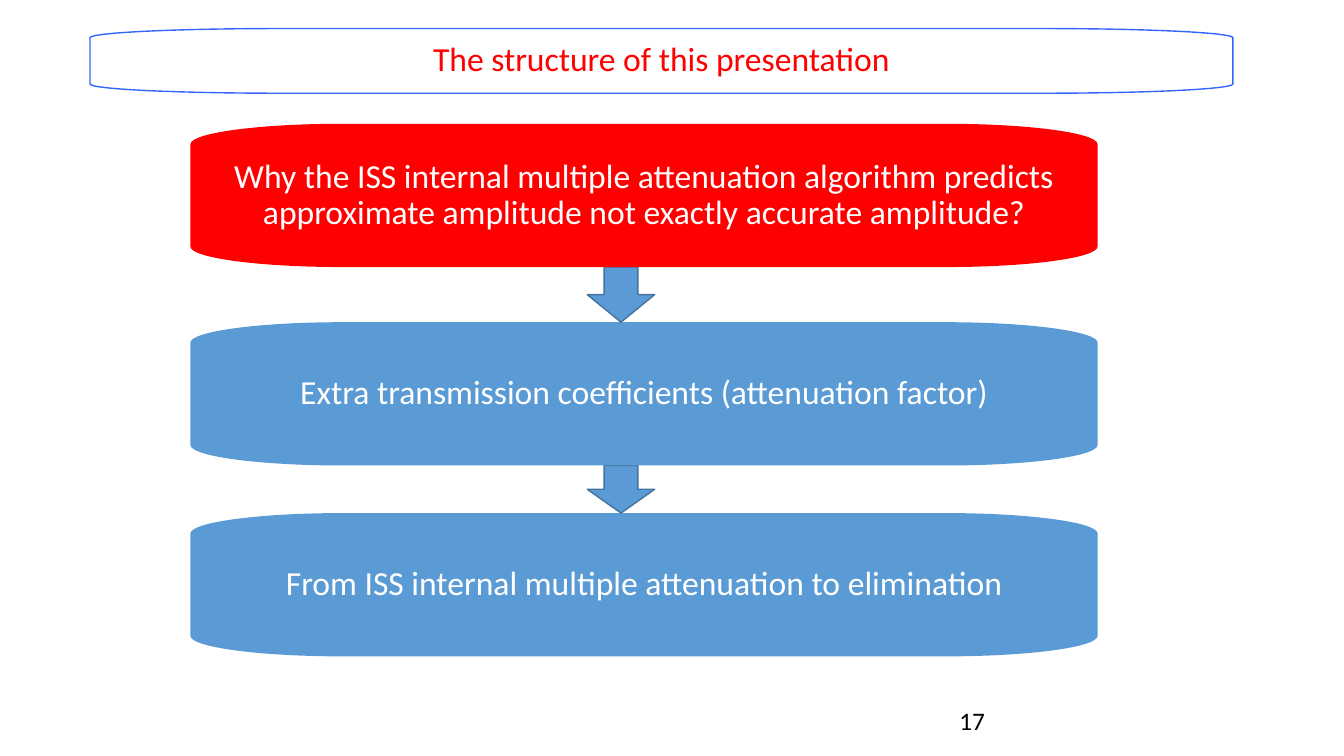
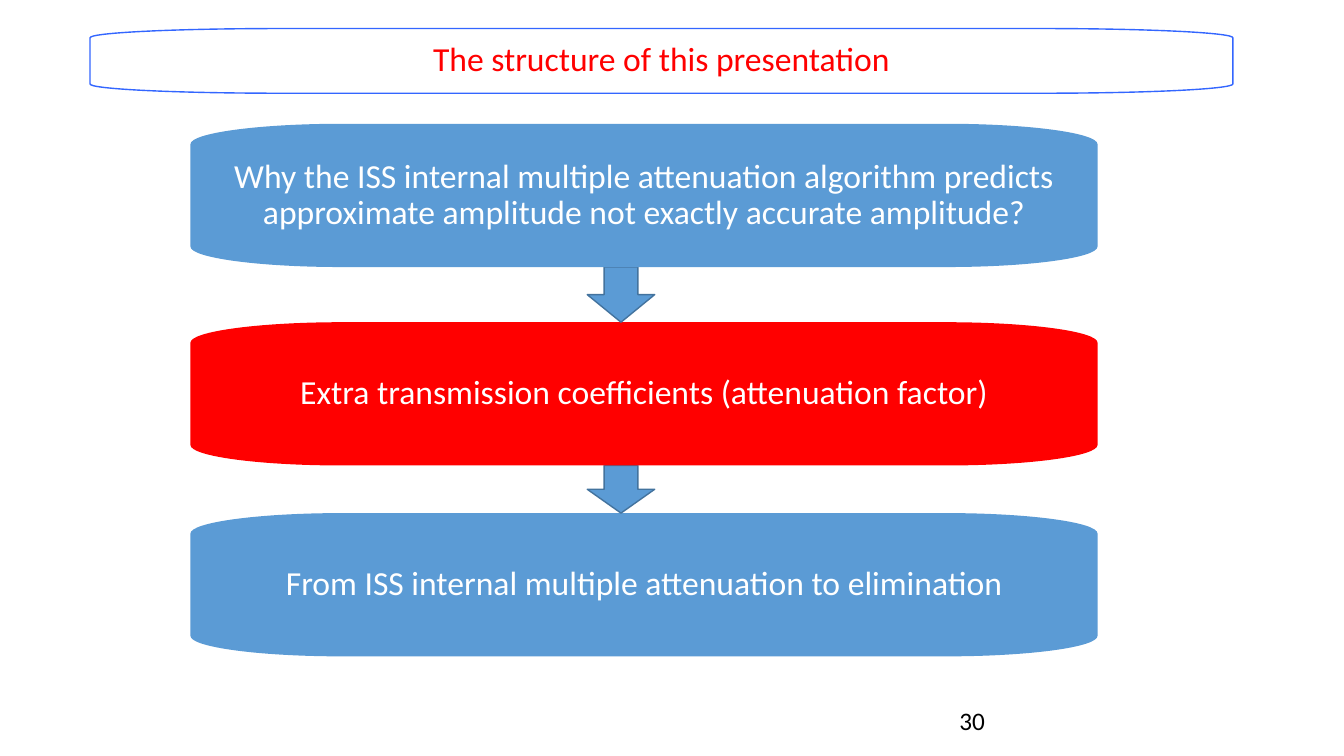
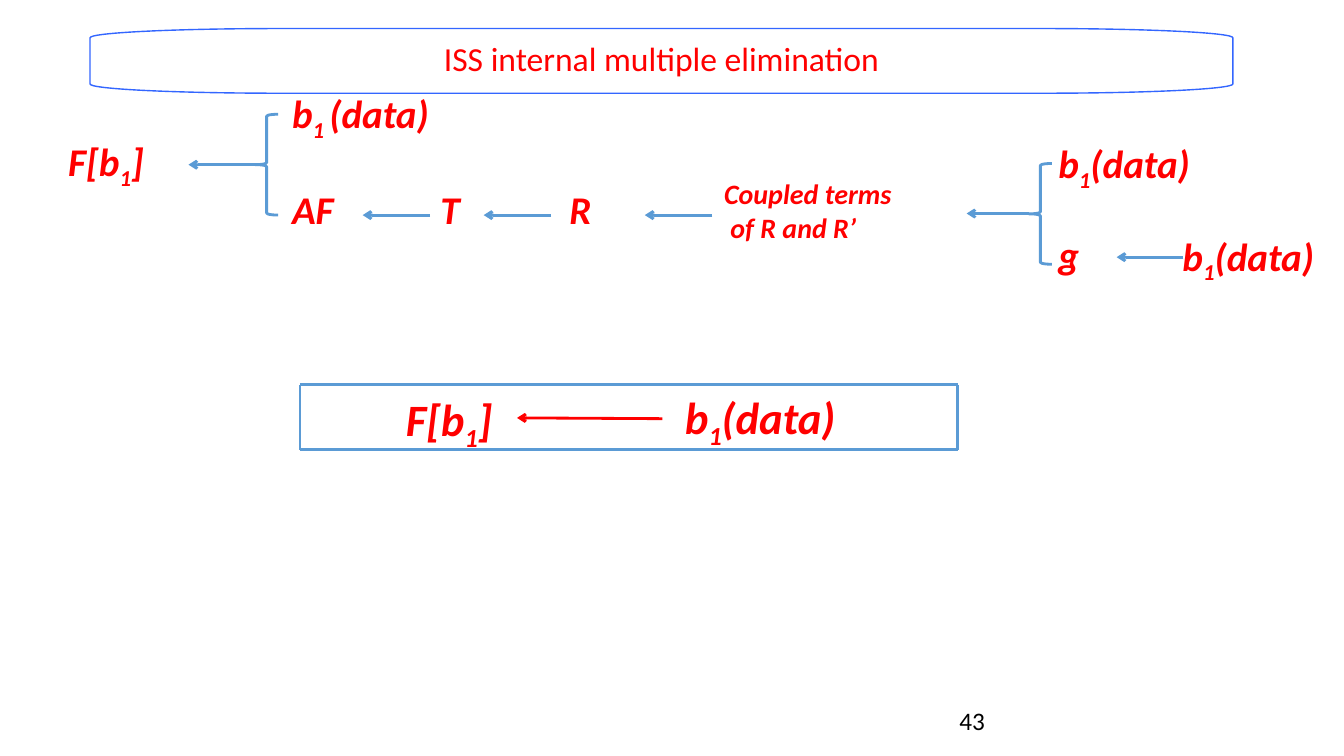
from lxml import etree
from pptx import Presentation
from pptx.dml.color import RGBColor
from pptx.enum import shapes, text
from pptx.oxml.ns import qn
from pptx.util import Cm, Pt

WHITE = RGBColor(0xFF, 0xFF, 0xFF)
BLACK = RGBColor(0x00, 0x00, 0x00)
RED = RGBColor(0xFF, 0x00, 0x00)
BLUE = RGBColor(0x5B, 0x9B, 0xD5)
DARK_BLUE = RGBColor(0x43, 0x73, 0x9E)
TITLE_BLUE = RGBColor(0x33, 0x66, 0xFF)

STEPS = [
    "Why the ISS internal multiple attenuation algorithm predicts "
    "approximate amplitude not exactly accurate amplitude?",
    "Extra transmission coefficients (attenuation factor)",
    "From ISS internal multiple attenuation to elimination",
]
STEP_TOPS = [3.12, 8.12, 12.93]
STEP_LEFT, STEP_WIDTH, STEP_HEIGHT = 4.8, 22.86, 3.61


class Deck:
    font = "Calibri"

    def __init__(self):
        self.prs = Presentation()
        self.prs.slide_width, self.prs.slide_height = Cm(33.87), Cm(19.05)
        self.shapes = None

    def new_slide(self):
        self.shapes = self.prs.slides.add_slide(self.prs.slide_layouts[6]).shapes

    def style_font(self, font, size, color, slanted=False):
        font.name, font.size, font.color.rgb = self.font, Pt(size), color
        font.bold = font.italic = slanted

    def paint(self, shape, fill, line, width=1):
        shape.shadow.inherit = False
        if fill is None:
            shape.fill.background()
        else:
            shape.fill.solid()
            shape.fill.fore_color.rgb = fill
        if line is None:
            shape.line.fill.background()
        else:
            shape.line.color.rgb = line
            shape.line.width = Pt(width)

    def barrel_outline(self, left, top, width, height):
        """An octagon whose four slanted sides are bent into elliptical corners."""
        w, h = Cm(width), Cm(height)
        rx, ry = w // 6, h // 7
        points = [(0, ry), (rx, 0), (w - rx, 0), (w, ry),
                  (w, h - ry), (w - rx, h), (rx, h), (0, h - ry)]
        builder = self.shapes.build_freeform(*points[0])
        builder.add_line_segments(points[1:], close=True)
        box = builder.convert_to_shape(Cm(left), Cm(top))
        slants = list(box._element.iter(qn("a:lnTo")))[::2]
        corners = [(0, 0), (w, 0), (w, h), (0, h)]
        for slant, corner, start, end in zip(slants, corners, points[::2], points[1::2]):
            slant_parent = slant.getparent()
            curve = etree.Element(qn("a:cubicBezTo"))
            pulls = [tuple(round(p + 0.55 * (c - p)) for p, c in zip(point, corner))
                     for point in (start, end)]
            for x, y in pulls + [end]:
                etree.SubElement(curve, qn("a:pt"), x=str(x), y=str(y))
            slant_parent.replace(slant, curve)
        return box

    def barrel(self, left, top, width, height, words, fill, color, line=None):
        box = self.barrel_outline(left, top, width, height)
        self.paint(box, fill, line)
        frame = box.text_frame
        frame.word_wrap = True
        frame.vertical_anchor = text.MSO_ANCHOR.MIDDLE
        frame.margin_left = frame.margin_right = Cm(0.38)
        frame.margin_top = frame.margin_bottom = Cm(0.38)
        frame.text = words
        paragraph = frame.paragraphs[0]
        paragraph.alignment = text.PP_ALIGN.CENTER
        paragraph.line_spacing = 0.9
        self.style_font(paragraph.runs[0].font, 24, color)

    def title(self, words):
        self.barrel(2.27, 0.72, 28.8, 1.63, words, WHITE, RED, TITLE_BLUE)

    def page_number(self, number):
        box = self.shapes.add_textbox(Cm(23.93), Cm(17.65), Cm(7.62), Cm(1.02))
        box.text_frame.word_wrap = True
        box.text_frame.text = str(number)
        self.style_font(box.text_frame.paragraphs[0].runs[0].font, 18, BLACK)

    def preset(self, kind, left, top, width, height, fill, line, weight):
        shape = self.shapes.add_shape(kind, Cm(left), Cm(top), Cm(width), Cm(height))
        self.paint(shape, fill, line, weight)

    def line(self, x1, y1, x2, y2, color=BLUE, arrow=False):
        line = self.shapes.add_connector(
            shapes.MSO_CONNECTOR.STRAIGHT, Cm(x1), Cm(y1), Cm(x2), Cm(y2))
        line.line.color.rgb = color
        line.line.width = Pt(2)
        if arrow:
            etree.SubElement(line.line._get_or_add_ln(), qn("a:tailEnd"), type="arrow")
        etree.SubElement(line._element.spPr, qn("a:effectLst"))

    def term(self, left, top, width, height, *lines, size=28):
        """Bold italic red text; a part between underscores is a subscript."""
        box = self.shapes.add_textbox(Cm(left), Cm(top), Cm(width), Cm(height))
        frame = box.text_frame
        frame.word_wrap = False
        frame.auto_size = text.MSO_AUTO_SIZE.SHAPE_TO_FIT_TEXT
        for index, line in enumerate(lines):
            paragraph = frame.add_paragraph() if index else frame.paragraphs[0]
            for part, words in enumerate(line.split("_")):
                run = paragraph.add_run()
                run.text = words
                self.style_font(run.font, size, RED, slanted=True)
                if part % 2:
                    run._r.get_or_add_rPr().set("baseline", "-25000")


def structure_slide(deck, current, number):
    """The outline, with the current step in red."""
    deck.new_slide()
    for index in reversed(range(len(STEPS))):
        top = STEP_TOPS[index]
        bottom = top + STEP_HEIGHT
        if index + 1 < len(STEPS):
            deck.preset(shapes.MSO_SHAPE.DOWN_ARROW, 14.8, bottom, 1.7,
                        STEP_TOPS[index + 1] - bottom, BLUE, DARK_BLUE, 1)
        deck.barrel(STEP_LEFT, top, STEP_WIDTH, STEP_HEIGHT, STEPS[index],
                    RED if index == current else BLUE, WHITE)
    deck.title("The structure of this presentation")
    deck.page_number(number)


def elimination_slide(deck):
    deck.new_slide()
    left, top, right, bottom = 7.56, 9.7, 24.13, 11.33
    for y in (top, bottom):
        deck.line(left, y, right, y)
    for x in (left, right):
        deck.line(x, top, x, bottom)
    deck.term(9.98, 9.75, 3.07, 1.63, "F[b_1_]", size=32)
    deck.line(16.69, 10.55, 13.03, 10.53, RED, arrow=True)
    deck.term(17.01, 9.7, 4.52, 1.63, "b_1_(data)", size=32)

    for left, top in [(6.43, 2.88), (25.93, 4.12)]:
        deck.preset(shapes.MSO_SHAPE.LEFT_BRACE, left, top, 0.58, 2.54, None, BLUE, 2)
    for start, length, y in [(6.43, 1.68, 4.15), (10.84, 1.7, 5.42),
                             (13.89, 1.7, 5.42), (17.95, 1.7, 5.42),
                             (25.93, 1.57, 5.38), (29.82, 1.68, 6.48)]:
        deck.line(start, y, start - length, y, arrow=True)
    for left, top, width, words in [
            (1.47, 3.33, 2.77, "F[b_1_]"), (7.11, 2.13, 4.17, "b_1 _(data)"),
            (7.11, 4.55, 1.6, "AF"), (10.85, 4.55, 1.02, "T"),
            (14.1, 4.55, 1.07, "R"), (26.42, 3.38, 4.01, "b_1_(data)"),
            (26.42, 5.68, 1.3, "g"), (29.55, 5.72, 4.01, "b_1_(data)")]:
        deck.term(left, top, width, 1.45, words)
    deck.term(18.0, 4.33, 4.95, 1.96, "Coupled terms", " of R and R’", size=20)
    deck.title("ISS internal multiple elimination")
    deck.page_number(43)


def main():
    deck = Deck()
    structure_slide(deck, current=0, number=17)
    structure_slide(deck, current=1, number=30)
    elimination_slide(deck)
    deck.prs.save("out.pptx")


if __name__ == "__main__":
    main()
